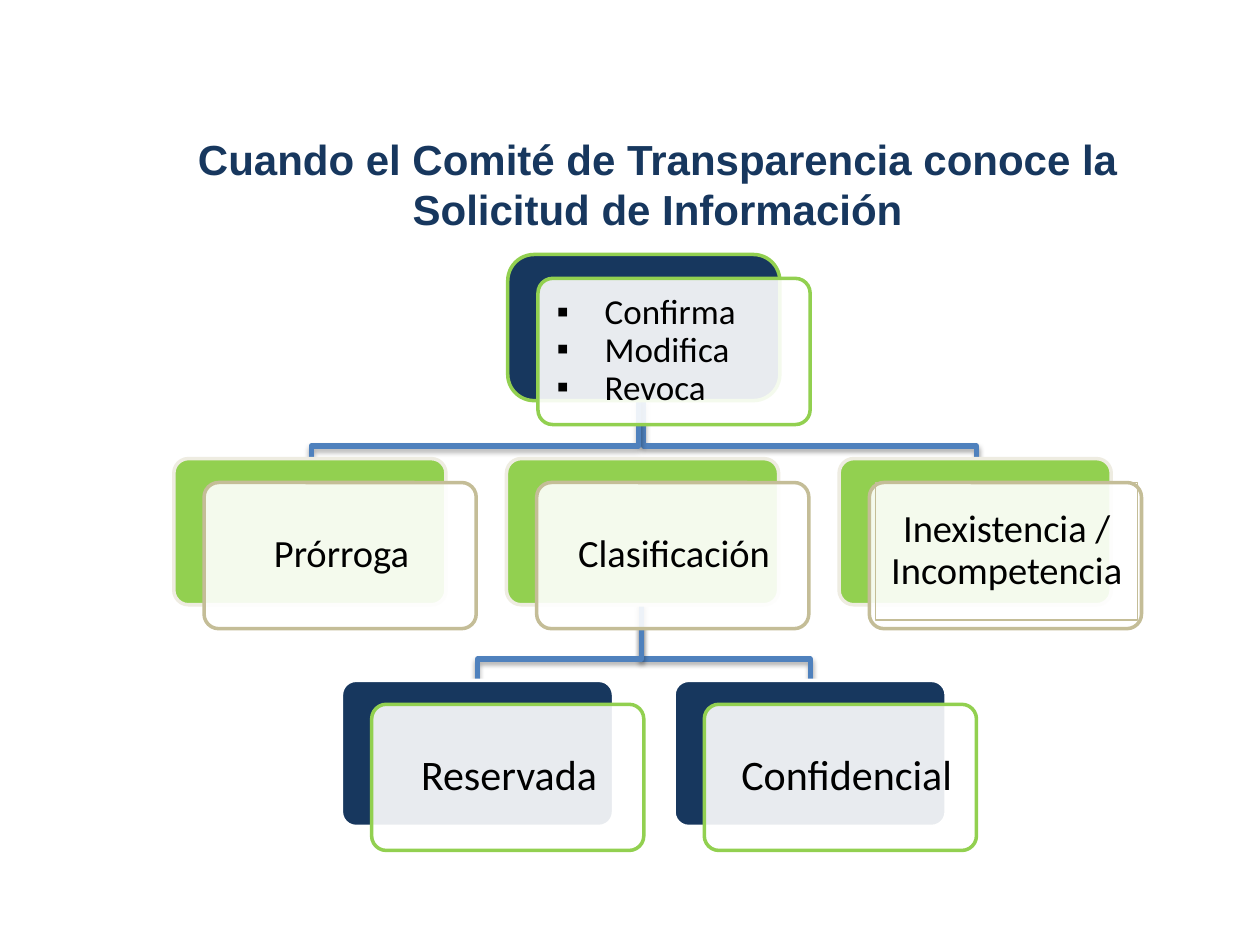
from lxml import etree
from pptx import Presentation
from pptx.dml.color import RGBColor
from pptx.enum.shapes import MSO_SHAPE
from pptx.enum.text import MSO_ANCHOR, PP_ALIGN
from pptx.oxml.ns import qn
from pptx.util import Inches, Pt

ROUNDED = MSO_SHAPE.ROUNDED_RECTANGLE
MIDDLE, BOTTOM = MSO_ANCHOR.MIDDLE, MSO_ANCHOR.BOTTOM
LEFT, CENTER = PP_ALIGN.LEFT, PP_ALIGN.CENTER

NAVY = RGBColor(0x17, 0x37, 0x5E)
GREEN = RGBColor(0x92, 0xD0, 0x50)
BLUE = RGBColor(0x4F, 0x81, 0xBD)
CREAM = RGBColor(0xEE, 0xEC, 0xE1)
TAN = RGBColor(0xC4, 0xBD, 0x97)
WHITE = RGBColor(0xFF, 0xFF, 0xFF)
BLACK = RGBColor(0x00, 0x00, 0x00)

CARD_W, CARD_H = 2.16, 1.16
PANEL_DX, PANEL_DY = 0.24, 0.19
LABEL_DX, LABEL_DY = 0.05, 0.03
LABEL_W, LABEL_H = 2.08, 1.09
COLUMN_STEP = 2.64
DECISION_LEFT, DECISION_TOP = 4.03, 2.02
MATTER_LEFT, MATTER_TOP = 1.38, 3.64
CLASS_LEFT, CLASS_TOP = 2.71, 5.4
BULLET_INDENT = 0.38


def inches(*lengths):
    return [Inches(length) for length in lengths]


def add_child(parent, tag, **attributes):
    child = etree.SubElement(parent, qn(tag))
    for name, value in attributes.items():
        child.set(name, str(value))
    return child


def add_bullet(paragraph):
    properties = paragraph._p.get_or_add_pPr()
    indent = Inches(BULLET_INDENT)
    properties.set("marL", str(indent))
    properties.set("indent", str(-indent))
    add_child(add_child(properties, "a:buClr"), "a:srgbClr", val=BLACK)
    add_child(properties, "a:buFont", typeface="Arial")
    add_child(properties, "a:buChar", char="▪")


def add_text(slide, box, lines, size, font="Calibri", color=BLACK, bold=False,
             align=CENTER, anchor=MIDDLE, margins=(0.1, 0.1), spacing=0.9, bulleted=False):
    label = slide.shapes.add_textbox(*inches(*box))
    frame = label.text_frame
    frame.word_wrap = True
    frame.vertical_anchor = anchor
    frame.margin_left = frame.margin_right = Inches(margins[0])
    frame.margin_top = frame.margin_bottom = Inches(margins[1])
    for index, line in enumerate(lines):
        paragraph = frame.add_paragraph() if index else frame.paragraphs[0]
        paragraph.alignment = align
        paragraph.line_spacing = spacing
        if bulleted:
            add_bullet(paragraph)
        run = paragraph.add_run()
        run.text = line
        run.font.size = Pt(size)
        run.font.name = font
        run.font.bold = bold
        run.font.color.rgb = color
    return label


def add_plate(slide, left, top, fill, border, rounding=0.1):
    plate = slide.shapes.add_shape(ROUNDED, *inches(left, top, CARD_W, CARD_H))
    plate.adjustments[0] = rounding
    plate.shadow.inherit = False
    plate.fill.solid()
    plate.fill.fore_color.rgb = fill
    plate.line.color.rgb = border
    plate.line.width = Pt(2)
    return plate


def add_card(slide, left, top, lines, size, fill, back_border, panel_border,
             rounding=0.1, label_width=LABEL_W, **text_style):
    add_plate(slide, left, top, fill, back_border, rounding)
    left, top = left + PANEL_DX, top + PANEL_DY
    panel = add_plate(slide, left, top, WHITE, panel_border)
    tint = panel.element.spPr.find(qn("a:solidFill")).find(qn("a:srgbClr"))
    add_child(tint, "a:alpha", val=90000)
    box = left + LABEL_DX, top + LABEL_DY, label_width, LABEL_H
    return add_text(slide, box, lines, size, **text_style)


def add_branch(slide, start_x, start_y, bend_y, end_x, end_y):
    builder = slide.shapes.build_freeform(*inches(start_x, start_y))
    corners = (start_x, bend_y), (end_x, bend_y), (end_x, end_y)
    builder.add_line_segments([inches(*corner) for corner in corners], close=False)
    branch = builder.convert_to_shape()
    branch.fill.background()
    branch.line.color.rgb = BLUE
    branch.line.width = Pt(3)
    branch.shadow.inherit = False
    effects = branch.element.spPr.find(qn("a:effectLst"))
    shadow = add_child(effects, "a:outerShdw", blurRad=Pt(3.1), dist=Pt(1.8),
                       dir=5400000, rotWithShape=0)
    add_child(add_child(shadow, "a:srgbClr", val=BLACK), "a:alpha", val=35000)


def main():
    deck = Presentation()
    deck.slide_width, deck.slide_height = inches(10, 7.5)
    slide = deck.slides.add_slide(deck.slide_layouts[6])

    add_text(slide, (1, 0.54, 8.44, 1.36),
             ["Cuando el Comité de Transparencia conoce la Solicitud de Información"],
             24, "Arial", NAVY, bold=True, anchor=BOTTOM, margins=(0.08, 0.04), spacing=1)

    for start_x, end_x in ((5.11, 7.75), (5.07, 2.47)):
        add_branch(slide, start_x, 3.18, 3.54, end_x, 3.71)
    for end_x in (6.43, 3.79):
        add_branch(slide, 5.09, 4.79, 5.23, end_x, CLASS_TOP)

    add_card(slide, DECISION_LEFT, DECISION_TOP, ["Confirma", "Modifica", "Revoca"], 20,
             NAVY, GREEN, GREEN, rounding=0.18, align=LEFT, bulleted=True)

    matters = ["Prórroga", "Clasificación", "Inexistencia / Incompetencia"]
    for column, matter in enumerate(matters):
        label = add_card(slide, MATTER_LEFT + column * COLUMN_STEP, MATTER_TOP,
                         [matter], 22, GREEN, CREAM, TAN)
    label.top = Inches(MATTER_TOP + PANEL_DY)
    label.line.color.rgb = TAN
    label.line.width = Pt(0.75)

    classes = [("Reservada", LABEL_W), ("Confidencial", CARD_W)]
    for column, (name, width) in enumerate(classes):
        add_card(slide, CLASS_LEFT + column * COLUMN_STEP, CLASS_TOP,
                 [name], 24, NAVY, WHITE, GREEN, label_width=width)

    deck.save("out.pptx")


if __name__ == "__main__":
    main()
